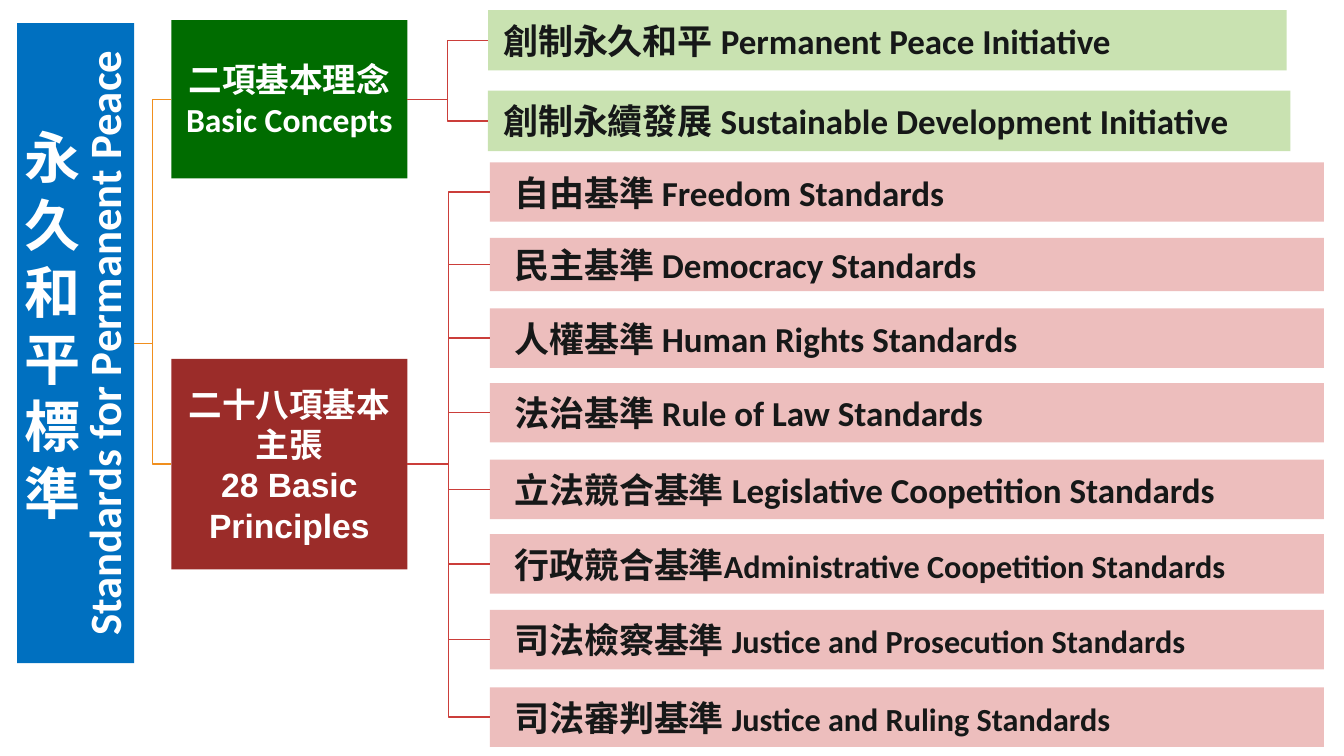
from dataclasses import dataclass

from lxml.etree import SubElement
from pptx import Presentation
from pptx.dml.color import RGBColor
from pptx.enum.shapes import MSO_CONNECTOR, MSO_SHAPE
from pptx.enum.text import MSO_ANCHOR, MSO_AUTO_SIZE, PP_ALIGN
from pptx.oxml.ns import qn
from pptx.util import Inches, Pt


@dataclass(frozen=True)
class Theme:
    blue: str = "0070C0"
    green: str = "006C00"
    red: str = "9B2C29"
    pale_green: str = "C9E2B1"
    pale_red: str = "EDBEBD"
    orange_line: str = "F08F1E"
    red_line: str = "CB3E3A"
    white: str = "FFFFFF"
    ink: str = "161818"
    heading: int = 40
    subheading: int = 32
    branch: int = 24
    leaf: int = 25
    small_leaf: int = 23
    latin: str = "Calibri"
    sans: str = "Arial"


T = Theme()

# Chinese, English, top, width, English size
CONCEPTS = [
    ("創制永久和平 ", "Permanent Peace Initiative", 0.1, 7.92, T.leaf),
    ("創制永續發展 ", "Sustainable Development Initiative", 0.9, 7.96, T.leaf),
]
# Chinese, English, top, height, English size
PRINCIPLES = [
    ("自由基準 ", "Freedom Standards", 1.61, 0.59, T.leaf),
    ("民主基準 ", "Democracy Standards", 2.36, 0.53, T.leaf),
    ("人權基準 ", "Human Rights Standards", 3.06, 0.59, T.leaf),
    ("法治基準 ", "Rule of Law Standards", 3.8, 0.59, T.leaf),
    ("立法競合基準 ", "Legislative Coopetition Standards", 4.56, 0.59, T.leaf),
    ("行政競合基準", "Administrative Coopetition Standards", 5.3, 0.59, T.small_leaf),
    ("司法檢察基準 ", "Justice and Prosecution Standards", 6.05, 0.59, T.small_leaf),
    ("司法審判基準 ", "Justice and Ruling Standards", 6.82, 0.59, T.small_leaf),
]


def add_run(p, text, *, size, color, font=T.latin):
    r = p.add_run()
    r.text = text
    r.font.name, r.font.size, r.font.bold = font, Pt(size), True
    r.font.color.rgb = RGBColor.from_string(color)


def set_margins(tf, left, top, right, bottom):
    tf.margin_left, tf.margin_top = Inches(left), Inches(top)
    tf.margin_right, tf.margin_bottom = Inches(right), Inches(bottom)


def add_box(s, x, y, w, h, fill):
    sp = s.shapes.add_shape(MSO_SHAPE.RECTANGLE, Inches(x), Inches(y), Inches(w), Inches(h))
    sp.shadow.inherit = False
    sp.fill.solid()
    sp.fill.fore_color.rgb = RGBColor.from_string(fill)
    sp.line.fill.background()
    sp.text_frame.word_wrap = True
    return sp


def add_root(s, x, y, w, h):
    """Blue column with upward text and the slide title on top of it."""
    sp = add_box(s, x, y, w, h, T.blue)
    tf = sp.text_frame
    tf._txBody.bodyPr.set("vert", "vert270")
    tf.vertical_anchor = MSO_ANCHOR.BOTTOM
    set_margins(tf, 0.04, 0.04, 0.04, 0.04)
    p = tf.paragraphs[0]
    p.alignment, p.line_spacing = PP_ALIGN.CENTER, Pt(25)
    add_run(p, "Standards for Permanent Peace", size=T.subheading, color=T.white)

    title = s.shapes.title
    title.left, title.top = Inches(x - 0.03), Inches(y + 0.94)
    title.width, title.height = Inches(0.69), Inches(4.17)
    tf = title.text_frame
    tf.word_wrap, tf.auto_size = True, MSO_AUTO_SIZE.NONE
    tf.vertical_anchor = MSO_ANCHOR.TOP
    set_margins(tf, 0.1, 0.05, 0.1, 0.05)
    p = tf.paragraphs[0]
    p.alignment, p.line_spacing = PP_ALIGN.LEFT, 1.0
    add_run(p, "永久和平標準", size=T.heading, color=T.white)
    sp._element.addnext(title._element)
    return sp


def add_branch(s, x, y, w, h, *, fill, chinese, english, font, margin):
    sp = add_box(s, x, y, w, h, fill)
    tf = sp.text_frame
    tf.vertical_anchor = MSO_ANCHOR.MIDDLE
    set_margins(tf, margin, margin, margin, margin)
    for p, text, face in ((tf.paragraphs[0], chinese, T.sans),
                          (tf.add_paragraph(), english, font)):
        p.alignment = PP_ALIGN.CENTER
        add_run(p, text, size=T.branch, color=T.white, font=face)
    return sp


def add_leaf(s, x, y, w, h, *, fill, chinese, english, size, indent, font=T.latin):
    sp = add_box(s, x, y, w, h, fill)
    tf = sp.text_frame
    tf.vertical_anchor = MSO_ANCHOR.MIDDLE
    set_margins(tf, indent, 0, 0, 0)
    p = tf.paragraphs[0]
    p.alignment = PP_ALIGN.LEFT
    add_run(p, chinese, size=T.leaf, color=T.ink, font=font)
    add_run(p, english, size=size, color=T.ink)
    return sp


def join(s, parent, child, color):
    """Elbow line from the parent's right side to the child's left side."""
    cn = s.shapes.add_connector(MSO_CONNECTOR.ELBOW, 0, 0, 0, 0)
    cn.begin_connect(parent, 3)
    cn.end_connect(child, 1)
    cn.line.color.rgb = RGBColor.from_string(color)
    cn.line.width = Pt(1)
    SubElement(cn._element.spPr, qn("a:effectLst"))


def build_slide(prs):
    s = prs.slides.add_slide(prs.slide_layouts[5])
    root = add_root(s, 0.17, 0.23, 1.16, 6.35)
    concepts = add_branch(s, 1.7, 0.2, 2.34, 1.57, fill=T.green, chinese="二項基本理念",
                          english="Basic Concepts", font=T.latin, margin=0.02)
    principles = add_branch(s, 1.7, 3.56, 2.34, 2.09, fill=T.red, chinese="二十八項基本主張",
                            english="28 Basic Principles", font=T.sans, margin=0.1)
    for branch in (concepts, principles):
        join(s, root, branch, T.orange_line)
    for chinese, english, top, width, size in CONCEPTS:
        leaf = add_leaf(s, 4.84, top, width, 0.6, fill=T.pale_green, chinese=chinese,
                        english=english, size=size, indent=0.15, font=T.sans)
        join(s, concepts, leaf, T.red_line)
    for chinese, english, top, height, size in PRINCIPLES:
        leaf = add_leaf(s, 4.86, top, 8.27, height, fill=T.pale_red, chinese=chinese,
                        english=english, size=size, indent=0.24)
        join(s, principles, leaf, T.red_line)


def main():
    prs = Presentation()
    prs.slide_width, prs.slide_height = Inches(13.33), Inches(7.5)
    build_slide(prs)
    prs.save("out.pptx")


if __name__ == "__main__":
    main()
